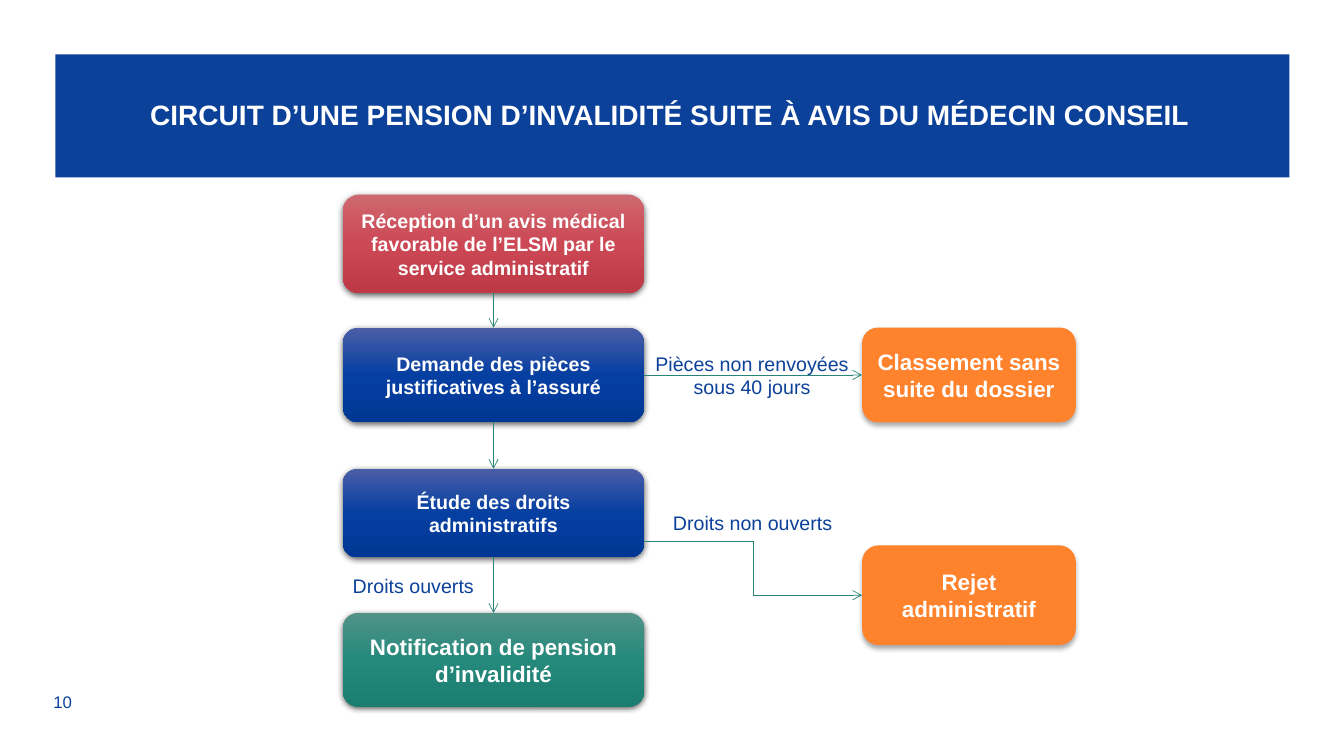
import itertools

import pptx
import pptx.dml.color
import pptx.enum.shapes
import pptx.enum.text
import pptx.oxml
import pptx.oxml.ns
import pptx.util

# Content
TITLE = "CIRCUIT D’UNE PENSION D’INVALIDITÉ SUITE À AVIS DU MÉDECIN CONSEIL"
PAGE_NUMBER = "10"

COLORS = {"blue": "0C419A", "white": "FFFFFF", "orange": "FF822D", "line": "298478"}
GRADIENTS = {
    "red": ("CE6870", "CD4855", "BD3946"),
    "blue": ("4B5EA7", "053FA1", "003794"),
    "green": ("529388", "24897B", "1C7D71"),
}
# Shadow: opacity in percent, blur and distance in points
SHADOWS = {"gradient": (63, 4.5, 1.5), "solid": (32, 3.5, 2.2)}

# Grid: column (left, width) and row (top, height) in inches
COLUMNS = {"main": (3.4, 2.99), "exit": (8.55, 2.12)}
ROWS = {
    "reception": (1.93, 0.98),
    "request": (3.25, 0.94),
    "study": (4.65, 0.88),
    "rejection": (5.41, 0.99),
    "notification": (6.08, 0.93),
}
# Text, column, row, fill, text size
STEPS = [
    ("Réception d’un avis médical favorable de l’ELSM par le service administratif",
     "main", "reception", "red", 14),
    ("Demande des pièces justificatives à l’assuré", "main", "request", "blue", 14),
    ("Classement sans suite du dossier", "exit", "request", "orange", 16),
    ("Étude des droits administratifs", "main", "study", "blue", 14),
    ("Notification de pension d’invalidité", "main", "notification", "green", 16),
    ("Rejet administratif", "exit", "rejection", "orange", 16),
]
# Text, left, top, width, height, alignment
LABELS = [
    ("Pièces non renvoyées sous 40 jours", 6.38, 3.44, 2.16, 0.57, "CENTER"),
    ("Droits ouverts", 3.4, 5.64, 1.65, 0.34, "LEFT"),
    ("Droits non ouverts", 6.47, 5.02, 1.99, 0.34, "CENTER"),
]
STUDY_EXIT_Y = 5.37

Inches = pptx.util.Inches
presentation = pptx.Presentation()
presentation.slide_width = Inches(13.33)
presentation.slide_height = Inches(7.5)
slide = presentation.slides.add_slide(presentation.slide_layouts[6])


def rgb(name):
    return pptx.dml.color.RGBColor.from_string(COLORS[name])


def drawing_xml(tag, body):
    return pptx.oxml.parse_xml(f"<a:{tag} {pptx.oxml.ns.nsdecls('a')} {body}")


def write(shape, text, size, color="white", bold=False, align="CENTER", anchor="MIDDLE"):
    frame = shape.text_frame
    frame.word_wrap = True
    frame.vertical_anchor = pptx.enum.text.MSO_ANCHOR[anchor]
    paragraph = frame.paragraphs[0]
    paragraph.alignment = pptx.enum.text.PP_ALIGN[align]
    run = paragraph.add_run()
    run.text = text
    font_format = {"name": "Arial", "size": pptx.util.Pt(size), "bold": bold}
    for name, value in font_format.items():
        setattr(run.font, name, value)
    run.font.color.rgb = rgb(color)
    return frame


def add_box(kind, left, top, width, height):
    shape = slide.shapes.add_shape(
        pptx.enum.shapes.MSO_SHAPE[kind],
        Inches(left), Inches(top), Inches(width), Inches(height))
    shape.shadow.inherit = False
    shape.line.fill.background()
    return shape


def add_text(text, left, top, width, height, **text_format):
    box = slide.shapes.add_textbox(Inches(left), Inches(top), Inches(width), Inches(height))
    write(box, text, color="blue", **text_format)


def fill_solid(shape, color):
    shape.fill.solid()
    shape.fill.fore_color.rgb = rgb(color)


def fill_gradient(shape, stops):
    shape.fill.gradient()
    shape.fill.gradient_angle = 270
    stop_list = shape.element.spPr.find(".//" + pptx.oxml.ns.qn("a:gsLst"))
    for stop in list(stop_list):
        stop_list.remove(stop)
    for index, color in enumerate(stops):
        stop_list.append(drawing_xml(
            "gs", f'pos="{index * 50000}"><a:srgbClr val="{color}"/></a:gs>'))


def add_shadow(shape, opacity, blur, distance):
    effects = shape.element.spPr.find(pptx.oxml.ns.qn("a:effectLst"))
    effects.append(drawing_xml(
        "outerShdw",
        f'blurRad="{pptx.util.Pt(blur)}" dist="{pptx.util.Pt(distance)}" dir="5400000" '
        f'rotWithShape="0"><a:srgbClr val="000000"><a:alpha val="{opacity * 1000}"/>'
        "</a:srgbClr></a:outerShdw>"))


def add_route(*points):
    """Draw straight segments through the points, with an arrowhead at the end."""
    for start, end in itertools.pairwise(points):
        connector = slide.shapes.add_connector(
            pptx.enum.shapes.MSO_CONNECTOR.STRAIGHT,
            *(Inches(value) for value in (*start, *end)))
        connector.line.color.rgb = rgb("line")
        connector.line.width = pptx.util.Pt(0.5)
        connector.element.spPr.append(drawing_xml("effectLst", "/>"))
    connector.line._get_or_add_ln().append(drawing_xml("tailEnd", 'type="arrow"/>'))


# Title band and page number
band = add_box("RECTANGLE", 0.55, 0.54, 12.24, 1.22)
fill_solid(band, "blue")
title_frame = write(band, TITLE, 20, bold=True, align="LEFT")
title_frame.paragraphs[0].line_spacing = 0.9
margins = {"margin_left": 0.94, "margin_top": 0.08, "margin_right": 0.08, "margin_bottom": 0.08}
for name, value in margins.items():
    setattr(title_frame, name, Inches(value))
add_text(PAGE_NUMBER, 0.43, 6.81, 0.79, 0.31, size=12, align="LEFT")

# Steps
for text, column, row, fill, size in STEPS:
    (left, width), (top, height) = COLUMNS[column], ROWS[row]
    step = add_box("ROUNDED_RECTANGLE", left, top, width, height)
    if fill in GRADIENTS:
        fill_gradient(step, GRADIENTS[fill])
        add_shadow(step, *SHADOWS["gradient"])
    else:
        fill_solid(step, fill)
        add_shadow(step, *SHADOWS["solid"])
    write(step, text, size, bold=True)

# Arrows down the main column
main_left, main_width = COLUMNS["main"]
main_center, main_right = main_left + main_width / 2, main_left + main_width
main_rows = [ROWS[row] for _, column, row, _, _ in STEPS if column == "main"]
for (top, height), (next_top, _) in itertools.pairwise(main_rows):
    add_route((main_center, top + height), (main_center, next_top))

# Arrows to the exits
exit_left = COLUMNS["exit"][0]
elbow_x = (main_right + exit_left) / 2
request_y, rejection_y = (
    top + height / 2 for top, height in (ROWS["request"], ROWS["rejection"]))
add_route((main_right, request_y), (exit_left, request_y))
add_route((main_right, STUDY_EXIT_Y), (elbow_x, STUDY_EXIT_Y),
          (elbow_x, rejection_y), (exit_left, rejection_y))

# Arrow labels
for text, left, top, width, height, align in LABELS:
    add_text(text, left, top, width, height, size=14, align=align, anchor="TOP")

presentation.save("out.pptx")
